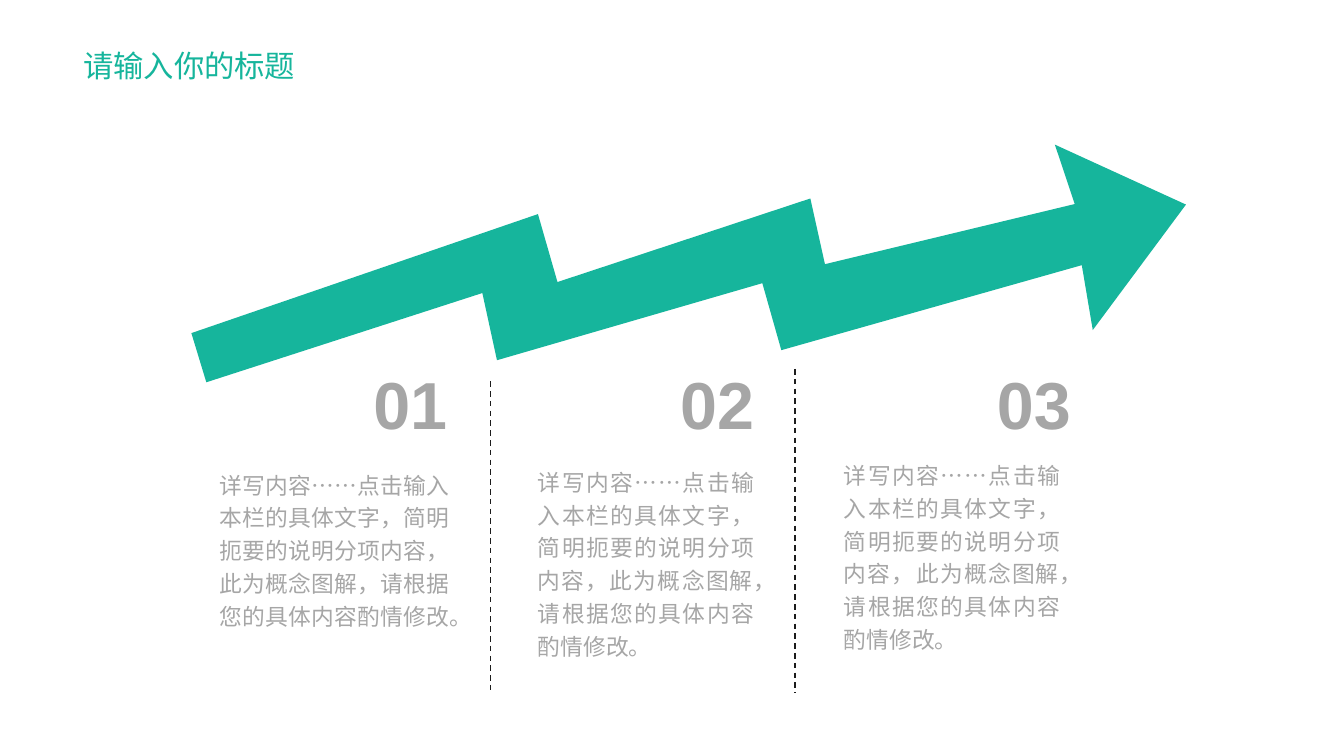
from dataclasses import dataclass

from pptx import Presentation
from pptx.dml.color import RGBColor
from pptx.enum.dml import MSO_LINE_DASH_STYLE as Dash
from pptx.enum.shapes import MSO_CONNECTOR as Connector
from pptx.enum.text import MSO_ANCHOR as Anchor, MSO_AUTO_SIZE as AutoSize, PP_ALIGN as Align
from pptx.oxml.ns import qn
from pptx.util import Pt
from lxml.etree import SubElement


@dataclass(frozen=True)
class Theme:
    accent: RGBColor = RGBColor(0x16, 0xB5, 0x9C)
    muted: RGBColor = RGBColor(0xA6, 0xA6, 0xA6)
    rule: RGBColor = RGBColor(0x1C, 0x1C, 0x1C)
    text_font: str = "Noto Sans CJK SC"
    number_font: str = "Arial"
    title_size: float = 16
    body_size: float = 12
    number_size: float = 35


THEME = Theme()

BODY = "详写内容……点击输入本栏的具体文字，简明扼要的说明分项内容，此为概念图解，请根据您的具体内容酌情修改。"

# Number, number box (left, width), text box (left, top, width, height)
COLUMNS = [
    ("01", (181.4, 69.8), (108.7, 241.9, 135.4, 94.3)),
    ("02", (342.7, 70.6), (276.5, 240.5, 128.2, 112.3)),
    ("03", (510.5, 69.1), (437.8, 236.9, 128.2, 112.3)),
]
NUMBER_TOP, NUMBER_HEIGHT = 188.6, 48.2

# Divider (x, top)
DIVIDERS = [(258.5, 200.9), (419, 194.4)]
DIVIDER_BOTTOM = 365

ARROW = [
    (100.9, 175.5), (283.6, 112.8), (293.9, 148.6), (427.2, 104.6), (434.9, 139.2),
    (566.6, 107.5), (556.1, 76.2), (625.2, 107.8), (576.1, 173.9), (570.3, 139.7),
    (411.9, 184.5), (401.9, 149.2), (262, 189.8), (254.3, 154.4), (108.8, 201.4),
]


def write_text(box, text, *, size, color, font=THEME.text_font, bold=False,
               align=Align.LEFT, spacing=1.0, insets=(7.2, 3.6)):
    """Fill a box or placeholder with one formatted paragraph."""
    frame = box.text_frame
    frame.word_wrap = True
    frame.auto_size = AutoSize.SHAPE_TO_FIT_TEXT
    frame.vertical_anchor = Anchor.TOP
    frame.margin_left = frame.margin_right = Pt(insets[0])
    frame.margin_top = frame.margin_bottom = Pt(insets[1])
    para = frame.paragraphs[0]
    para.alignment = align
    para.line_spacing = spacing
    span = para.add_run()
    span.text = text
    span.font.size = Pt(size)
    span.font.bold = bold
    span.font.color.rgb = color
    span.font.name = font
    # East Asian characters take their own font entry
    SubElement(span.font._element, qn("a:ea"), typeface=font)


def add_title(page, text, left, top, width, height):
    title = page.shapes.title
    title.left, title.top, title.width, title.height = map(Pt, (left, top, width, height))
    write_text(title, text, size=THEME.title_size, color=THEME.accent, spacing=1.5)


def add_text(page, text, left, top, width, height, **style):
    box = page.shapes.add_textbox(*map(Pt, (left, top, width, height)))
    write_text(box, text, color=THEME.muted, **style)


def add_divider(page, x, top, bottom):
    line = page.shapes.add_connector(Connector.STRAIGHT, *map(Pt, (x, top, x, bottom)))
    line.line.color.rgb = THEME.rule
    line.line.width = Pt(0.75)
    line.line.dash_style = Dash.DASH
    SubElement(line._element.spPr, qn("a:effectLst"))


def add_outline(page, points):
    start, *others = [(Pt(x), Pt(y)) for x, y in points]
    builder = page.shapes.build_freeform(*start)
    builder.add_line_segments(others, close=True)
    outline = builder.convert_to_shape()
    outline.shadow.inherit = False
    outline.fill.solid()
    outline.fill.fore_color.rgb = THEME.accent
    outline.line.fill.background()


def add_column(page, number, number_span, text_area):
    left, width = number_span
    add_text(page, BODY, *text_area, size=THEME.body_size,
             align=Align.JUSTIFY, spacing=1.2)
    add_text(page, number, left, NUMBER_TOP, width, NUMBER_HEIGHT,
             size=THEME.number_size, font=THEME.number_font, bold=True,
             align=Align.CENTER, insets=(5, 2.9))


def main():
    deck = Presentation()
    deck.slide_width, deck.slide_height = Pt(708.5), Pt(396.7)
    page = deck.slides.add_slide(deck.slide_layouts.get_by_name("Title Only"))

    # Title
    add_title(page, "请输入你的标题", 36.7, 11.5, 152.6, 36)

    # Dividers and rising arrow
    for x, top in DIVIDERS:
        add_divider(page, x, top, DIVIDER_BOTTOM)
    add_outline(page, ARROW)

    # Numbered columns
    for column in COLUMNS:
        add_column(page, *column)

    deck.save("out.pptx")


if __name__ == "__main__":
    main()
